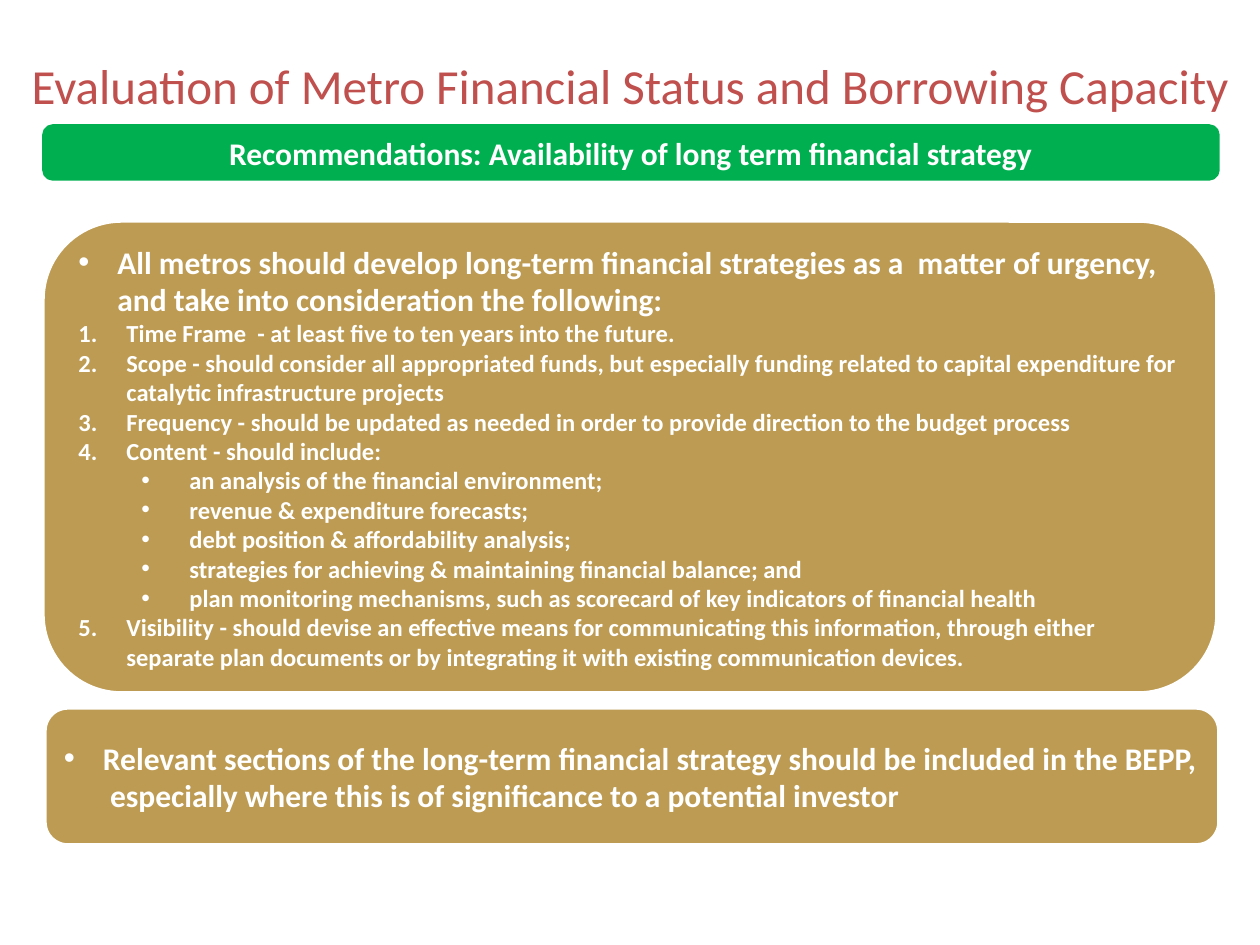
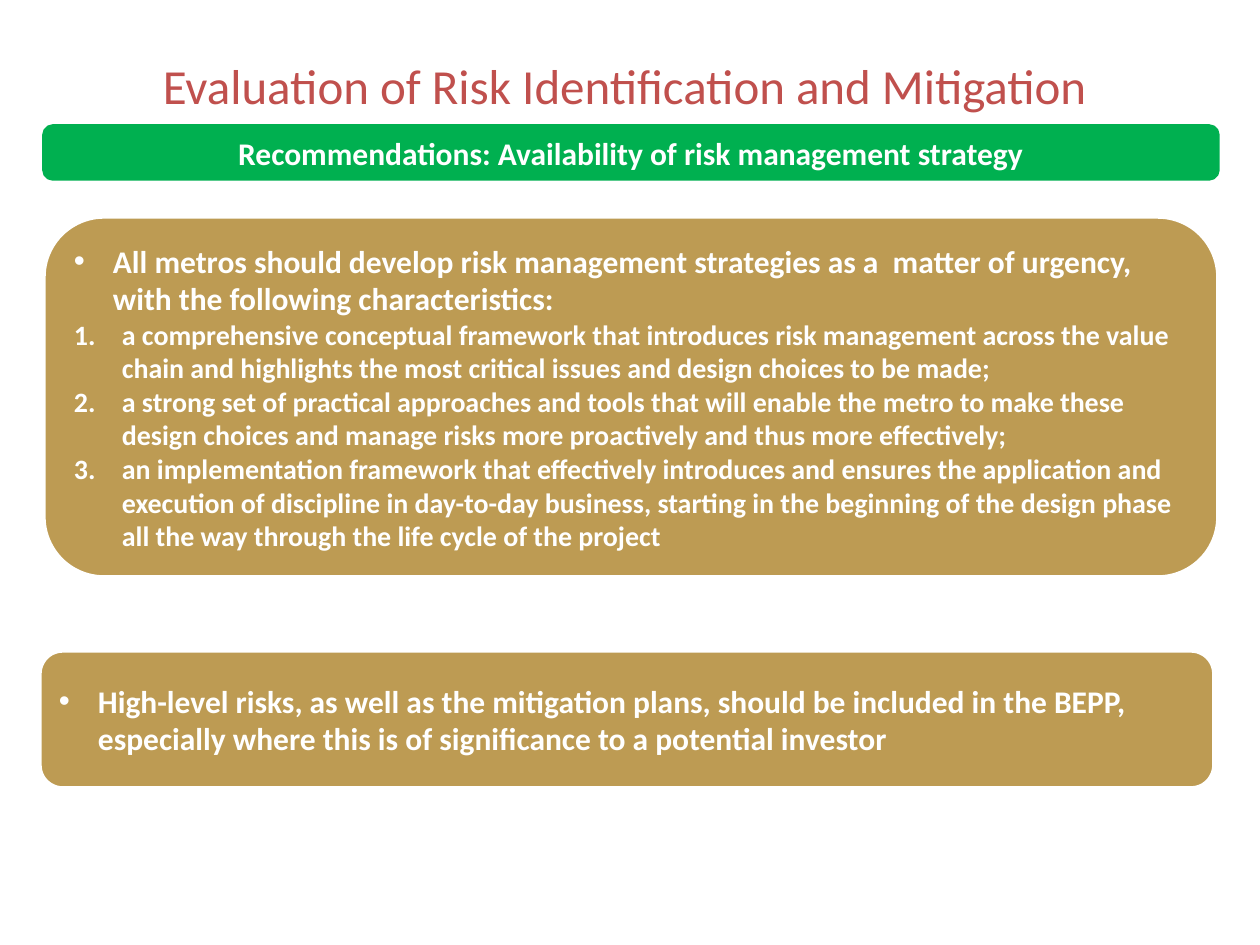
import pptx
import pptx.dml.color
import pptx.enum.shapes
import pptx.enum.text
import pptx.util
from dataclasses import dataclass
from lxml import etree

PX = 914400 / 126
NS = "{http://schemas.openxmlformats.org/drawingml/2006/main}"
ALIGN = pptx.enum.text.PP_ALIGN
MID = pptx.enum.text.MSO_ANCHOR.MIDDLE


@dataclass(frozen=True)
class Theme:
    font: str = "Calibri"
    red: str = "C0504D"
    green: str = "00B050"
    gold: str = "BD9B53"
    white: str = "FFFFFF"
    title: int = 28
    lead: int = 18


theme = Theme()
rgb = pptx.dml.color.RGBColor.from_string

# style: list level, left indent and hang in px, mark
styles = {
    "lead": (0, 39, 39, "•"),
    "num": (0, 48, 48, None),
    "sub": (1, 111, 48, "•"),
}

pages = [
    {
        "title": "Evaluation of Metro Financial Status and Borrowing Capacity",
        "band": "Recommendations: Availability of long term financial strategy",
        "size": 14,
        "cards": [
            ((43, 221, 1174, 472), [
                ("lead", "All metros should develop long-term financial strategies as a  matter of urgency, "
                         "and take into consideration the following:"),
                ("num", "Time Frame  - at least five to ten years into the future."),
                ("num", "Scope - should consider all appropriated funds, but especially funding related "
                        "to capital expenditure for catalytic infrastructure projects"),
                ("num", "Frequency - should be updated as needed in order to provide direction "
                        "to the budget process"),
                ("num", "Content - should include:"),
                ("sub", "an analysis of the financial environment;"),
                ("sub", "revenue & expenditure forecasts;"),
                ("sub", "debt position & affordability analysis;"),
                ("sub", "strategies for achieving & maintaining financial balance; and"),
                ("sub", "plan monitoring mechanisms, such as scorecard of key indicators "
                        "of financial health"),
                ("num", "Visibility - should devise an effective means for communicating this information, "
                        "through either separate plan documents or by integrating it with existing "
                        "communication devices."),
            ]),
            ((45, 708, 1174, 137), [
                ("lead", "Relevant sections of the long-term financial strategy should be included "
                         "in the BEPP,  especially where this is of significance to a potential investor"),
            ]),
        ],
    },
    {
        "title": "Evaluation of Risk Identification and Mitigation ",
        "band": "Recommendations: Availability of risk management strategy",
        "size": 16,
        "cards": [
            ((44, 217, 1174, 360), [
                ("lead", "All metros should develop risk management strategies as a  matter of urgency, "
                         "with the following characteristics:"),
                ("num", "a comprehensive conceptual framework that introduces risk management across "
                        "the value chain and highlights the most critical issues and design choices "
                        "to be made;"),
                ("num", "a strong set of practical approaches and tools that will enable the metro "
                        "to make these design choices and manage risks more proactively and thus "
                        "more effectively;"),
                ("num", "an implementation framework that effectively introduces and ensures the "
                        "application and execution of discipline in day-to-day business, starting in "
                        "the beginning of the design phase all the way through the life cycle "
                        "of the project"),
            ]),
            ((40, 651, 1174, 137), [
                ("lead", "High-level risks, as well as the mitigation plans, should be included "
                         "in the BEPP,  especially where this is of significance to a potential investor"),
            ]),
        ],
    },
]


def panel(slide, box, fill, line):
    """Add a rounded panel and return its text frame."""
    shape = slide.shapes.add_shape(
        pptx.enum.shapes.MSO_SHAPE.ROUNDED_RECTANGLE, *[round(n * PX) for n in box])
    shape.shadow.inherit = False
    shape.fill.solid()
    shape.fill.fore_color.rgb = rgb(fill)
    shape.line.color.rgb = rgb(line)
    shape.line.width = pptx.util.Pt(2)
    frame = shape.text_frame
    frame.word_wrap = True
    frame.vertical_anchor = MID
    return frame


def write(para, text, size, color, bold=True, align=ALIGN.CENTER):
    para.alignment = align
    run = para.add_run()
    run.text = text
    run.font.name = theme.font
    run.font.size = pptx.util.Pt(size)
    run.font.bold = bold
    run.font.color.rgb = rgb(color)


deck = pptx.Presentation()
deck.slide_width = round(1260 * PX)
deck.slide_height = round(945 * PX)

for page in pages:
    slide = deck.slides.add_slide(deck.slide_layouts[6])

    head = slide.shapes.add_textbox(*[round(n * PX) for n in (21, 53, 1218, 64)]).text_frame
    head.word_wrap = True
    head.vertical_anchor = MID
    head.margin_left = head.margin_right = head.margin_top = head.margin_bottom = 0
    write(head.paragraphs[0], page["title"], theme.title, theme.red, bold=False)

    band = panel(slide, (44, 126, 1174, 53), theme.green, theme.green)
    write(band.paragraphs[0], page["band"], theme.lead, theme.white)

    for box, items in page["cards"]:
        frame = panel(slide, box, theme.gold, theme.white)
        for i, (style, text) in enumerate(items):
            para = frame.add_paragraph() if i else frame.paragraphs[0]
            level, left, hang, mark = styles[style]
            para.level = level
            props = para._p.get_or_add_pPr()
            props.set("marL", str(round(left * PX)))
            props.set("indent", str(round(-hang * PX)))
            if mark:
                etree.SubElement(props, NS + "buFont", typeface="Arial")
                etree.SubElement(props, NS + "buChar", char=mark)
            else:
                etree.SubElement(props, NS + "buFont", typeface="+mj-lt")
                etree.SubElement(props, NS + "buAutoNum", type="arabicPeriod")
            size = theme.lead if style == "lead" else page["size"]
            write(para, text, size, theme.white, align=ALIGN.LEFT)

deck.save("out.pptx")
